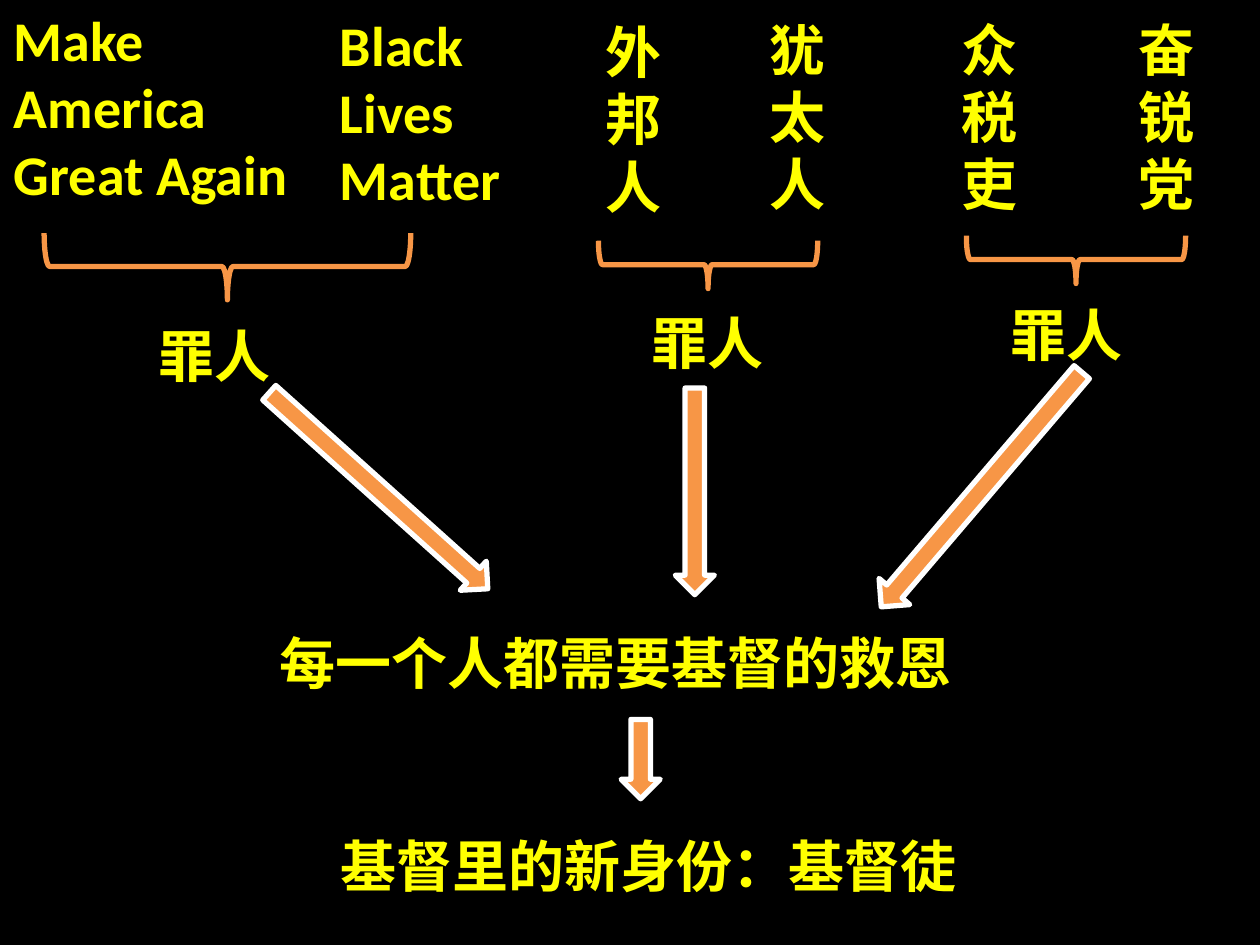
from dataclasses import dataclass

from lxml import etree
from pptx import Presentation
from pptx import util as u
from pptx.dml.color import RGBColor
from pptx.enum import shapes, text
from pptx.oxml.ns import qn

COLUMNS, ROWS = 100, 75
YELLOW, ORANGE, WHITE, BLACK = "FFFF00", "F79646", "FFFFFF", "000000"
FONT = "Calibri"

deck = Presentation()
deck.slide_width, deck.slide_height = u.Inches(10), u.Inches(7.5)


@dataclass(frozen=True)
class Area:
    column: float
    row: float
    columns: float
    rows: float

    def frame(self) -> tuple[int, int, int, int]:
        across, down = deck.slide_width / COLUMNS, deck.slide_height / ROWS
        return (round(self.column * across), round(self.row * down),
                round(self.columns * across), round(self.rows * down))


@dataclass(frozen=True)
class Label:
    wording: str
    area: Area


@dataclass(frozen=True)
class Sign:
    area: Area
    turn: float = 0


def colour(code: str) -> RGBColor:
    return RGBColor.from_string(code)


def write(holder, wording: str) -> None:
    frame = holder.text_frame
    frame.word_wrap = True
    frame.auto_size = text.MSO_AUTO_SIZE.NONE
    frame.vertical_anchor = text.MSO_ANCHOR.MIDDLE
    paragraph = frame.paragraphs[0]
    paragraph.alignment = text.PP_ALIGN.LEFT
    run = paragraph.add_run()
    run.text = wording
    run.font.size, run.font.bold, run.font.name = u.Pt(32), True, FONT
    run.font.color.rgb = colour(YELLOW)
    east_asian = etree.Element(qn("a:ea"), typeface=FONT)
    run.font._element.find(qn("a:latin")).addnext(east_asian)


def draw_label(slide, label: Label) -> None:
    write(slide.shapes.add_textbox(*label.area.frame()), label.wording)


def draw_sign(slide, kind: shapes.MSO_SHAPE, sign: Sign, outline: str,
              inside: str | None = None) -> None:
    shape = slide.shapes.add_shape(kind, *sign.area.frame())
    shape.rotation = sign.turn
    shape.shadow.inherit = False
    shape.line.color.rgb = colour(outline)
    shape.line.width = u.Pt(3)
    if inside:
        shape.fill.solid()
        shape.fill.fore_color.rgb = colour(inside)
    else:
        shape.fill.background()


SLOGAN = Label("Make America Great Again", Area(0.1, 1.3, 27.9, 14.2))
GROUPS = [
    Label("Black Lives Matter", Area(26, 2.5, 15.7, 12.6)),
    Label("外邦人", Area(47.1, 5.5, 9.4, 7.8)),
    *(Label(wording, Area(column, 5.3, 9.4, 7.8)) for wording, column in
      [("犹太人", 60.1), ("众税吏", 75.3), ("奋锐党", 89.4)]),
]
SINNERS = [Label("罪人", Area(column, row, 12.9, 7.7))
           for column, row in [(11.6, 24.3), (50.7, 23.3), (79.2, 22.7)]]
CONCLUSIONS = [
    Label("每一个人都需要基督的救恩", Area(21.2, 49.4, 56.7, 6.3)),
    Label("基督里的新身份：基督徒", Area(26, 64.8, 53.2, 7.7)),
]
ARROWS = [
    Sign(Area(28.5, 27.3, 3.1, 23.3), 311.9),
    Sign(Area(53.6, 30.8, 3.1, 16.4)),
    Sign(Area(76.3, 26.6, 3.2, 24.5), 40.5),
    Sign(Area(49.3, 57.1, 3.1, 6.3)),
]
BRACES = [
    Sign(Area(15.4, 6.6, 5.3, 29.1), 270),
    Sign(Area(54.3, 12.3, 3.8, 17.4), 270),
    Sign(Area(83.5, 11.9, 3.8, 17.4), 270),
]


def main() -> None:
    slide = deck.slides.add_slide(deck.slide_layouts[5])
    slide.background.fill.solid()
    slide.background.fill.fore_color.rgb = colour(BLACK)
    title = slide.shapes.title
    title.left, title.top, title.width, title.height = SLOGAN.area.frame()
    write(title, SLOGAN.wording)
    for arrow in ARROWS:
        draw_sign(slide, shapes.MSO_SHAPE.DOWN_ARROW, arrow, WHITE, ORANGE)
    for brace in BRACES:
        draw_sign(slide, shapes.MSO_SHAPE.LEFT_BRACE, brace, ORANGE)
    for label in GROUPS + SINNERS + CONCLUSIONS:
        draw_label(slide, label)
    deck.save("out.pptx")


if __name__ == "__main__":
    main()
